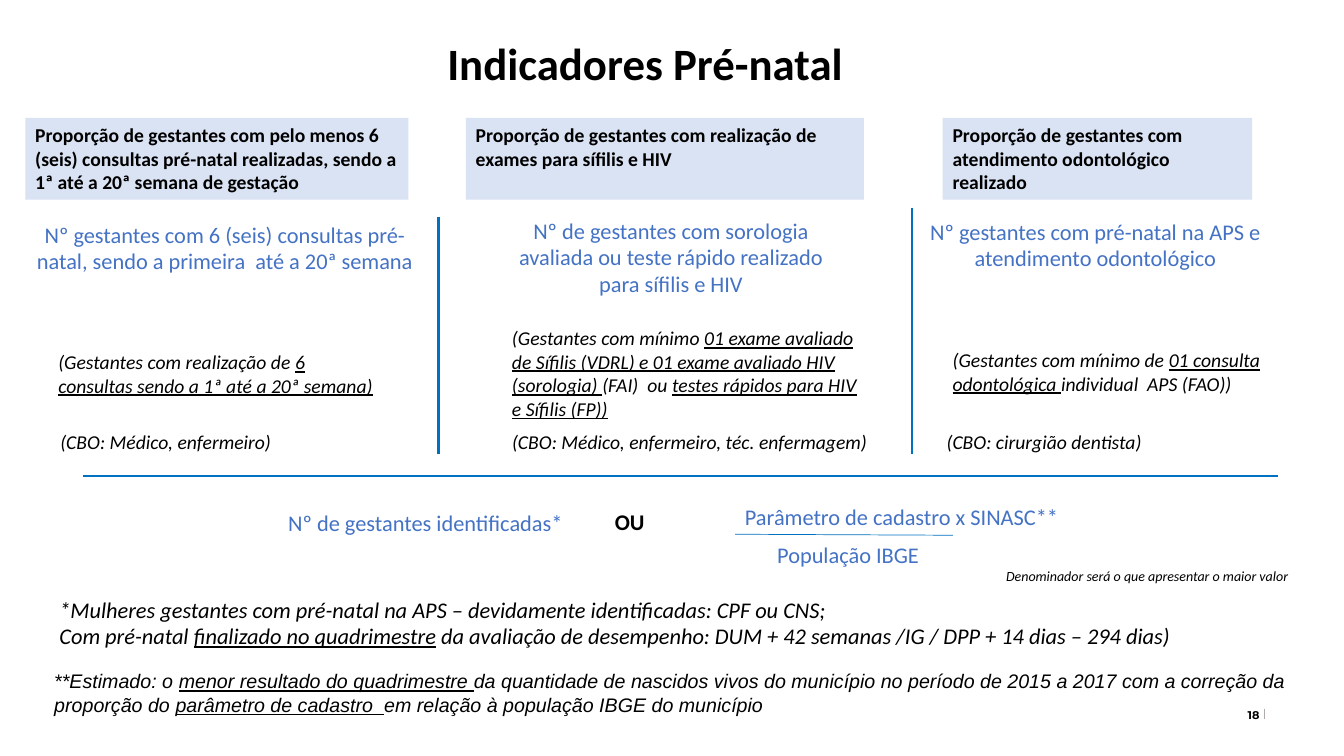
from lxml.etree import SubElement
from pptx import Presentation
from pptx.dml.color import RGBColor
from pptx.enum.shapes import MSO_CONNECTOR, MSO_SHAPE
from pptx.enum.text import MSO_ANCHOR, PP_ALIGN
from pptx.oxml.ns import qn
from pptx.util import Inches, Pt

WIDTH, HEIGHT = Inches(13.33), Inches(7.5)
BLACK, BLUE, LINE_BLUE, PALE_BLUE, GREY = "000000", "4472C4", "0070C0", "DAE3F3", "AFABAB"

# Text formats, one per role
TITLE = {"size": Pt(32), "bold": True}
HEADING = {"size": Pt(14), "bold": True}
FORMULA = {"size": Pt(16)}
DETAIL = {"size": Pt(14), "italic": True}
NOTE = {"size": Pt(16), "italic": True}
ESTIMATE = {"size": Pt(14), "italic": True, "name": "Arial"}
REMARK = {"size": Pt(10), "italic": True}
OPERATOR = {"size": Pt(16), "bold": True}
NUMBER = {"size": Pt(8), "bold": True, "name": "Montserrat"}

# Each indicator: text and (left, top, width, height) in percent of the slide
INDICATORS = [
    {
        "heading": ("Proporção de gestantes com pelo menos 6 (seis) consultas pré-natal "
                    "realizadas, sendo a 1ª até a 20ª semana de gestação",
                    (1.88, 15.6, 28.51, 10.8)),
        "numerator": ("Nº gestantes com 6 (seis) consultas pré-natal, sendo a primeira  "
                      "até a 20ª semana", (1.43, 28.53, 30.61, 8.53)),
        "detail": ("(Gestantes com realização de _6 consultas sendo a 1ª até a 20ª semana) _",
                   (3.6, 45.47, 24.98, 8.4)),
        "occupation": ("(CBO: Médico, enfermeiro)", (3.75, 52.93, 24.98, 8.4)),
    },
    {
        "heading": ("Proporção de gestantes com realização de exames para sífilis e HIV",
                    (34.66, 15.6, 29.63, 10.8)),
        "numerator": ("Nº de gestantes com sorologia avaliada ou teste rápido realizado "
                      "para sífilis e HIV", (36.31, 28, 27.23, 12.13)),
        "detail": ("(Gestantes com mínimo _01 exame avaliado de Sífilis (VDRL) e 01 exame "
                   "avaliado HIV (sorologia) _(FAI)  ou _testes rápidos para HIV e Sífilis (FP))_",
                   (37.36, 40, 27.23, 16.93)),
        "occupation": ("(CBO: Médico, enfermeiro, téc. enfermagem)", (37.36, 52.93, 28.96, 8.4)),
    },
    {
        "heading": ("Proporção de gestantes com atendimento odontológico realizado",
                    (70.14, 15.6, 23.03, 10.8)),
        "numerator": ("Nº gestantes com pré-natal na APS e atendimento odontológico",
                      (67.89, 28.13, 27.23, 8.53)),
        "detail": ("(Gestantes com mínimo de _01 consulta odontológica _individual  APS (FAO))",
                   (70.14, 45.2, 27.23, 8.4)),
        "occupation": ("(CBO: cirurgião dentista)", (69.69, 52.93, 28.96, 8.4)),
    },
]

DENOMINATOR = [
    ("Nº de gestantes identificadas*", (20.71, 66.67, 28.36, 4.93)),
    ("Parâmetro de cadastro x SINASC**", (54.69, 65.87, 26.41, 4.93)),
    ("População IBGE", (57.09, 70.93, 14.55, 4.93)),
]

# Lines: start x, start y, end x, end y, colour, points
LINES = [
    (32.63, 28.67, 32.63, 60, LINE_BLUE, 1.5),
    (67.89, 27.47, 67.89, 60, LINE_BLUE, 1.5),
    (6.15, 62.93, 95.12, 62.93, LINE_BLUE, 1.5),
    (54.69, 70.67, 70.89, 70.8, LINE_BLUE, 0.5),
    (94.07, 93.73, 94.07, 95.07, GREY, 1),
]


def color(value):
    return RGBColor.from_string(value)


def across(share):
    return round(WIDTH * share / 100)


def down(share):
    return round(HEIGHT * share / 100)


def place(box):
    left, top, width, height = box
    return across(left), down(top), across(width), down(height)


def set_all(target, values):
    for name, value in values.items():
        setattr(target, name, value)


def write(shape, text, style, ink=BLACK, align=PP_ALIGN.LEFT, anchor=MSO_ANCHOR.TOP, inset=0.05):
    """Fill a shape with text; parts between underscores are underlined."""
    frame = shape.text_frame
    set_all(frame, {"word_wrap": True, "vertical_anchor": anchor,
                    "margin_left": Inches(0.1), "margin_right": Inches(0.1),
                    "margin_top": Inches(inset), "margin_bottom": Inches(inset)})
    paragraph = frame.paragraphs[0]
    paragraph.alignment = align
    for row, line in enumerate(text.split("\n")):
        if row:
            paragraph.add_line_break()
        for index, part in enumerate(line.split("_")):
            if part:
                run = paragraph.add_run()
                run.text = part
                set_all(run.font, {"name": "Calibri", "underline": index % 2 == 1, **style})
                run.font.color.rgb = color(ink)


def add_text(slide, text, box, style, **options):
    write(slide.shapes.add_textbox(*place(box)), text, style, **options)


def add_heading(slide, text, box):
    shape = slide.shapes.add_shape(MSO_SHAPE.RECTANGLE, *place(box))
    shape.shadow.inherit = False
    shape.fill.solid()
    shape.fill.fore_color.rgb = color(PALE_BLUE)
    shape.line.fill.background()
    write(shape, text, HEADING)


def add_line(slide, start_x, start_y, end_x, end_y, ink, points):
    line = slide.shapes.add_connector(MSO_CONNECTOR.STRAIGHT, across(start_x), down(start_y),
                                      across(end_x), down(end_y))
    line.line.color.rgb = color(ink)
    line.line.width = Pt(points)
    SubElement(line._element.spPr, qn("a:effectLst"))


def add_indicator(slide, indicator):
    add_heading(slide, *indicator["heading"])
    add_text(slide, *indicator["numerator"], FORMULA, ink=BLUE, align=PP_ALIGN.CENTER)
    for part in ("detail", "occupation"):
        add_text(slide, *indicator[part], DETAIL, anchor=MSO_ANCHOR.BOTTOM, inset=0.1)


def main():
    presentation = Presentation()
    set_all(presentation, {"slide_width": WIDTH, "slide_height": HEIGHT})
    slide = presentation.slides.add_slide(presentation.slide_layouts[6])

    # Title and indicator columns
    add_text(slide, "Indicadores Pré-natal", (8.85, 4.13, 78.32, 8.53), TITLE,
             align=PP_ALIGN.CENTER)
    for line in LINES:
        add_line(slide, *line)
    for indicator in INDICATORS:
        add_indicator(slide, indicator)

    # Shared denominator
    for text, box in DENOMINATOR:
        add_text(slide, text, box, FORMULA, ink=BLUE)
    add_text(slide, "OU", (41.86, 65.87, 9.98, 8.4), OPERATOR, align=PP_ALIGN.CENTER, inset=0.1)
    add_text(slide, "Denominador será o que apresentar o maior valor",
             (74.12, 74.4, 24.7, 3.6), REMARK)

    # Footnotes and slide number
    add_text(slide, "*Mulheres gestantes com pré-natal na APS – devidamente identificadas: "
             "CPF ou CNS;\nCom pré-natal _finalizado no quadrimestre_ da avaliação de "
             "desempenho: DUM + 42 semanas /IG / DPP + 14 dias – 294 dias)",
             (3.68, 78.13, 89.5, 8.53), NOTE)
    add_text(slide, "**Estimado: o _menor resultado do quadrimestre _da quantidade de nascidos "
             "vivos do município no período de 2015 a 2017 com a correção da proporção do "
             "_parâmetro de cadastro  _em relação à população IBGE do município",
             (3.3, 87.87, 95.35, 7.6), ESTIMATE)
    add_text(slide, "18", (88.75, 91.87, 5.7, 5.33), NUMBER, align=PP_ALIGN.RIGHT,
             anchor=MSO_ANCHOR.MIDDLE)

    presentation.save("out.pptx")


if __name__ == "__main__":
    main()
